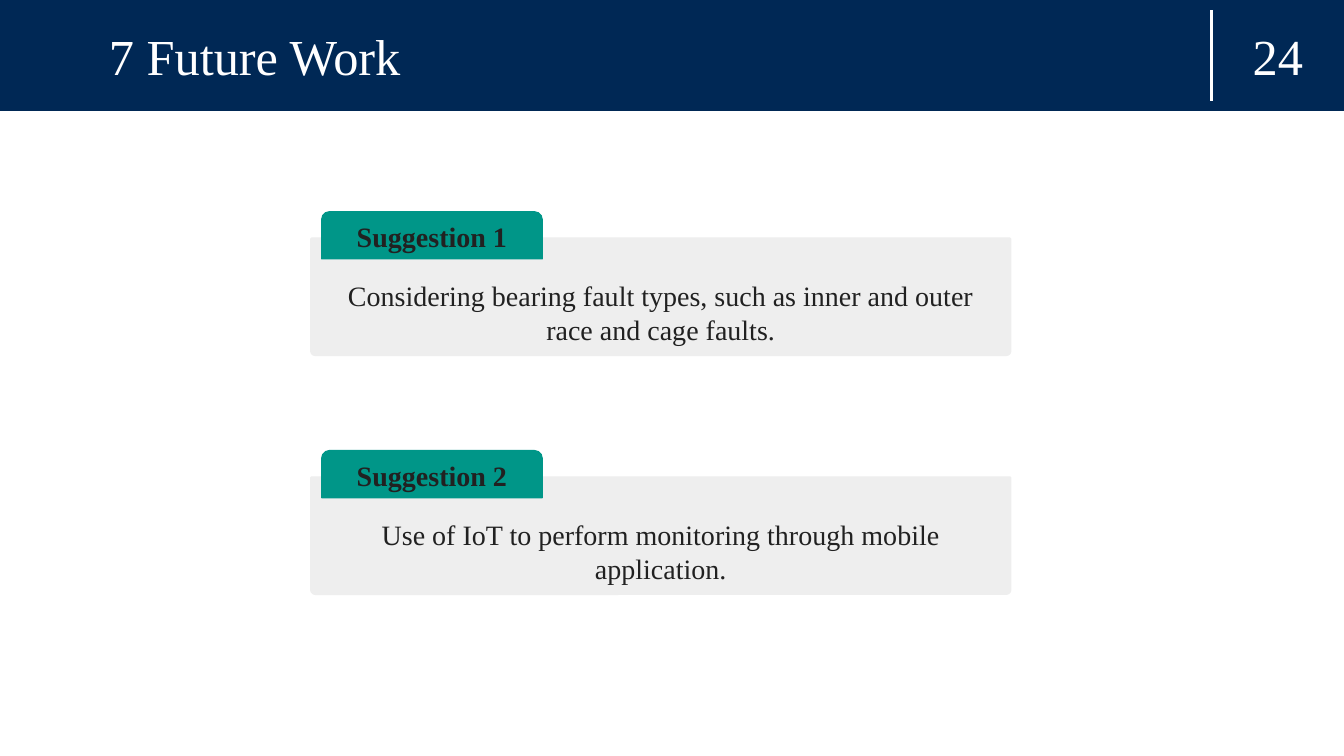
from dataclasses import dataclass

from lxml.etree import SubElement
from pptx import Presentation
from pptx.dml.color import RGBColor
from pptx.enum.shapes import MSO_CONNECTOR, MSO_SHAPE
from pptx.enum.text import MSO_ANCHOR, PP_ALIGN
from pptx.oxml.ns import qn
from pptx.shapes.autoshape import Shape
from pptx.slide import Slide
from pptx.util import Pt


@dataclass(frozen=True)
class Theme:
    navy: RGBColor = RGBColor(0x00, 0x28, 0x55)
    teal: RGBColor = RGBColor(0x00, 0x96, 0x88)
    panel: RGBColor = RGBColor(0xEE, 0xEE, 0xEE)
    white: RGBColor = RGBColor(0xFF, 0xFF, 0xFF)
    ink: RGBColor = RGBColor(0x21, 0x21, 0x21)
    font: str = "Times New Roman"
    title_size: float = 36
    body_size: float = 20


@dataclass(frozen=True)
class Box:
    left: float
    top: float
    width: float
    height: float


@dataclass(frozen=True)
class Suggestion:
    heading: str
    body: str


THEME = Theme()
SLIDE_WIDTH, SLIDE_HEIGHT = 960, 540
HEADER_HEIGHT = 79.2
DIVIDER_X = 865.4
HEADER_TEXT_TOP, HEADER_TEXT_HEIGHT = 7.2, 64.1
PANEL = Box(222.5, 170.6, 499, 82.8)
TAB = Box(229.7, 151.2, 157.7, 33.8)
SUGGESTION_PITCH = 170.6
PANEL_TEXT_TOP = 26.6
SUGGESTIONS = (
    Suggestion(
        "Suggestion 1",
        "Considering bearing fault types, such as inner and outer race and cage faults.",
    ),
    Suggestion(
        "Suggestion 2",
        "Use of IoT to perform monitoring through mobile application.",
    ),
)


def add_filled_shape(
    slide: Slide, kind: MSO_SHAPE, box: Box, color: RGBColor, line_width: float
) -> Shape:
    shape = slide.shapes.add_shape(
        kind, Pt(box.left), Pt(box.top), Pt(box.width), Pt(box.height)
    )
    shape.shadow.inherit = False
    shape.fill.solid()
    shape.fill.fore_color.rgb = color
    shape.line.color.rgb = color
    shape.line.width = Pt(line_width)
    return shape


def write_text(
    shape: Shape,
    text: str,
    size: float,
    color: RGBColor,
    alignment: PP_ALIGN = PP_ALIGN.CENTER,
    bold: bool = False,
) -> None:
    """Fill the shape with one wrapped, vertically centred paragraph."""
    frame = shape.text_frame
    frame.word_wrap = True
    frame.vertical_anchor = MSO_ANCHOR.MIDDLE
    paragraph = frame.paragraphs[0]
    paragraph.alignment = alignment
    run = paragraph.add_run()
    run.text = text
    run.font.name = THEME.font
    run.font.size = Pt(size)
    run.font.bold = bold
    run.font.color.rgb = color


def add_header_text(
    slide: Slide, text: str, left: float, width: float, alignment: PP_ALIGN
) -> Shape:
    text_box = slide.shapes.add_textbox(
        Pt(left), Pt(HEADER_TEXT_TOP), Pt(width), Pt(HEADER_TEXT_HEIGHT)
    )
    frame = text_box.text_frame
    frame.margin_left = frame.margin_right = Pt(7.2)
    frame.margin_top = frame.margin_bottom = Pt(7.2)
    write_text(text_box, text, THEME.title_size, THEME.white, alignment)
    return text_box


def add_header(slide: Slide, title: str, number: str) -> None:
    band = Box(0, 0, SLIDE_WIDTH, HEADER_HEIGHT)
    add_filled_shape(slide, MSO_SHAPE.RECTANGLE, band, THEME.navy, 0.75)
    divider = slide.shapes.add_connector(
        MSO_CONNECTOR.STRAIGHT, Pt(DIVIDER_X), Pt(72), Pt(DIVIDER_X), Pt(7.2)
    )
    divider.line.color.rgb = THEME.white
    divider.line.width = Pt(1.5)
    SubElement(divider.element.spPr, qn("a:effectLst"))
    add_header_text(
        slide, number, DIVIDER_X, SLIDE_WIDTH - DIVIDER_X, PP_ALIGN.CENTER
    )
    title_box = add_header_text(slide, title, 52.6, 797.8, PP_ALIGN.LEFT)
    properties = title_box.text_frame.paragraphs[0].runs[0].font
    properties.bold = False
    paragraph_properties = title_box.text_frame.paragraphs[0]._p.get_or_add_pPr()
    paragraph_properties.set("marL", str(Pt(36)))
    paragraph_properties.set("indent", str(Pt(-18)))


def add_suggestion(slide: Slide, suggestion: Suggestion, offset: float) -> None:
    """Draw a panel with its heading tab, moved down by the offset."""
    panel_box = Box(PANEL.left, PANEL.top + offset, PANEL.width, PANEL.height)
    panel = add_filled_shape(
        slide, MSO_SHAPE.ROUND_2_SAME_RECTANGLE, panel_box, THEME.panel, 2
    )
    panel.adjustments[0] = 0
    panel.adjustments[1] = 0.034
    panel.text_frame.margin_top = Pt(PANEL_TEXT_TOP)
    write_text(panel, suggestion.body, THEME.body_size, THEME.ink)

    tab_box = Box(TAB.left, TAB.top + offset, TAB.width, TAB.height)
    tab = add_filled_shape(
        slide, MSO_SHAPE.ROUND_2_SAME_RECTANGLE, tab_box, THEME.teal, 0.75
    )
    write_text(tab, suggestion.heading, THEME.body_size, THEME.ink, bold=True)


def main() -> None:
    presentation = Presentation()
    presentation.slide_width = Pt(SLIDE_WIDTH)
    presentation.slide_height = Pt(SLIDE_HEIGHT)
    slide = presentation.slides.add_slide(presentation.slide_layouts[6])
    slide.background.fill.solid()
    slide.background.fill.fore_color.rgb = THEME.ink

    page = Box(0, HEADER_HEIGHT, SLIDE_WIDTH, SLIDE_HEIGHT - HEADER_HEIGHT)
    add_filled_shape(slide, MSO_SHAPE.RECTANGLE, page, THEME.white, 2)
    add_header(slide, "7 Future Work", "24")
    for index, suggestion in enumerate(SUGGESTIONS):
        add_suggestion(slide, suggestion, index * SUGGESTION_PITCH)
    presentation.save("out.pptx")


if __name__ == "__main__":
    main()
